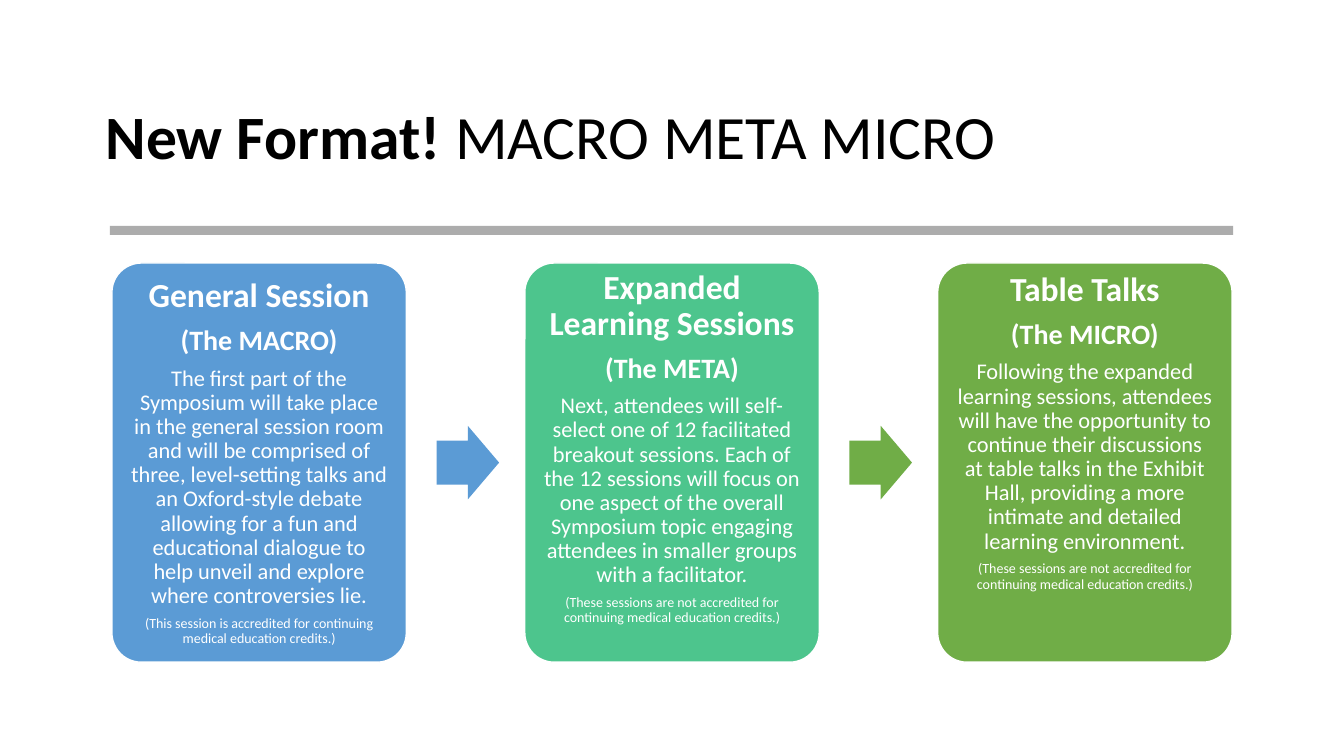
from dataclasses import dataclass

from lxml.etree import SubElement
from pptx import Presentation
from pptx.dml.color import RGBColor
from pptx.enum.shapes import MSO_SHAPE
from pptx.enum.text import MSO_ANCHOR, PP_ALIGN
from pptx.oxml.ns import qn
from pptx.util import Inches, Pt


@dataclass(frozen=True)
class Theme:
    font: str = "Calibri"
    black: str = "000000"
    white: str = "FFFFFF"
    grey: str = "808080"
    blue: str = "5B9BD5"
    teal: str = "4DC58D"
    green: str = "70AD47"
    title_size: int = 44
    card_sizes: tuple = (24, 20, 16, 10)  # heading, level, description, credit note
    bold_rows: int = 2
    line_spacing: float = 0.9
    gap_share: float = 0.35  # paragraph gap as a share of the type size


theme = Theme()


def add_block(kind, left, top, width, height, color):
    block = slide.shapes.add_shape(
        kind, Inches(left), Inches(top), Inches(width), Inches(height))
    block.shadow.inherit = False
    block.fill.solid()
    block.fill.fore_color.rgb = RGBColor.from_string(color)
    block.line.fill.background()
    return block


def style_run(run, size, color, bold):
    run.font.name = theme.font
    run.font.size = Pt(size)
    run.font.bold = bold
    run.font.color.rgb = RGBColor.from_string(color)


deck = Presentation()
deck.slide_width, deck.slide_height = Inches(13.33), Inches(7.5)
slide = deck.slides.add_slide(deck.slide_layouts[6])

# Title
title = slide.shapes.add_textbox(Inches(0.95), Inches(0.66), Inches(11.43), Inches(1.45))
title.text_frame.word_wrap = True
title.text_frame.vertical_anchor = MSO_ANCHOR.MIDDLE
headline = title.text_frame.paragraphs[0]
headline.line_spacing = theme.line_spacing
for words, bold in (("New Format! ", True), ("MACRO META MICRO", False)):
    run = headline.add_run()
    run.text = words
    style_run(run, theme.title_size, theme.black, bold)

# Translucent divider
divider = add_block(MSO_SHAPE.RECTANGLE, 1.09, 2.24, 11.14, 0.09, theme.grey)
divider_color = divider.fill._xPr.find(qn("a:solidFill"))[0]
SubElement(divider_color, qn("a:alpha"), val="65000")

# Session cards: colour, space kept free under the text, paragraphs
not_accredited = "(These sessions are not accredited for continuing medical education credits.)"
sessions = [
    (theme.blue, 0, (
        "General Session",
        "(The MACRO)",
        "The first part of the Symposium will take place in the general session room "
        "and will be comprised of three, level-setting talks and an Oxford-style debate "
        "allowing for a fun and educational dialogue to help unveil and explore where "
        "controversies lie.",
        "(This session is accredited for continuing medical education credits.)")),
    (theme.teal, 0.29, (
        "Expanded Learning Sessions",
        "(The META)",
        "Next, attendees will self-select one of 12 facilitated breakout sessions. Each "
        "of the 12 sessions will focus on one aspect of the overall Symposium topic "
        "engaging attendees in smaller groups with a facilitator.",
        not_accredited)),
    (theme.green, 0.6, (
        "Table Talks",
        "(The MICRO)",
        "Following the expanded learning sessions, attendees will have the opportunity "
        "to continue their discussions at table talks in the Exhibit Hall, providing a "
        "more intimate and detailed learning environment.",
        not_accredited)),
]
first_left, card_top, card_width, card_height = 1.11, 2.61, 2.92, 3.96
column_pitch = 4.095
inset = 0.1

for column, (color, free_space, rows) in enumerate(sessions):
    card = add_block(MSO_SHAPE.ROUNDED_RECTANGLE, first_left + column * column_pitch,
                     card_top, card_width, card_height, color)
    card.adjustments[0] = 0.1
    card.line.color.rgb = RGBColor.from_string(theme.white)
    card.line.width = Pt(1)
    frame = card.text_frame
    frame.word_wrap = True
    frame.vertical_anchor = MSO_ANCHOR.MIDDLE
    frame.margin_left = frame.margin_right = frame.margin_top = Inches(inset)
    frame.margin_bottom = Inches(inset + free_space)
    frame.text = "\n".join(rows)
    for row, (paragraph, size) in enumerate(zip(frame.paragraphs, theme.card_sizes)):
        paragraph.alignment = PP_ALIGN.CENTER
        paragraph.line_spacing = theme.line_spacing
        paragraph.space_after = Pt(size * theme.gap_share)
        style_run(paragraph.runs[0], size, theme.white, row < theme.bold_rows)

# Arrows between the cards
arrow_width, arrow_height = 0.62, 0.73
arrow_left = first_left + card_width + 0.3
arrow_top = card_top + (card_height - arrow_height) / 2
for gap, color in enumerate((theme.blue, theme.green)):
    arrow = add_block(MSO_SHAPE.RIGHT_ARROW, arrow_left + gap * column_pitch,
                      arrow_top, arrow_width, arrow_height, color)
    arrow.adjustments[0] = 0.6
    arrow.adjustments[1] = 0.5

deck.save("out.pptx")
